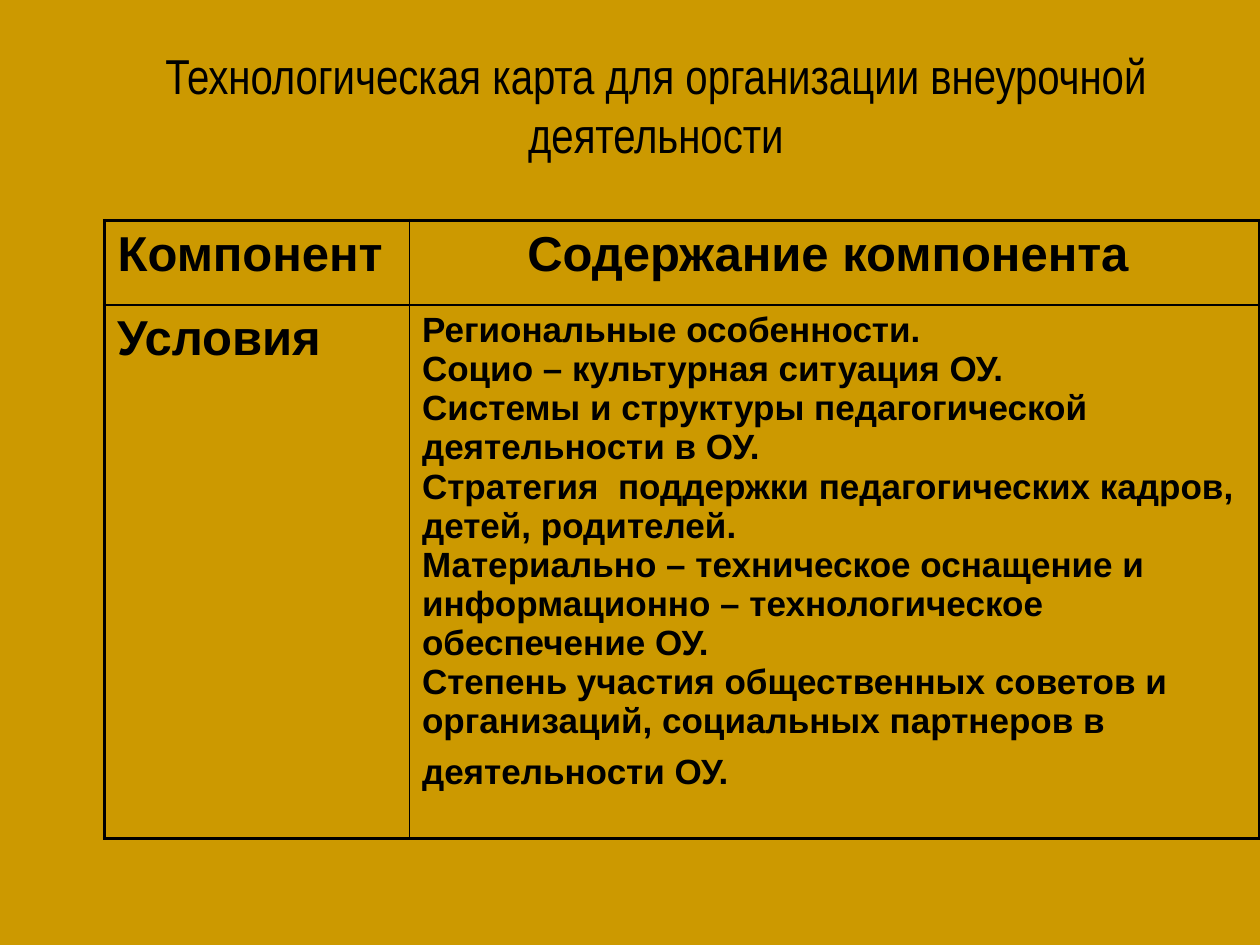
import pptx
import pptx.dml.color
import pptx.enum.text
import pptx.oxml
import pptx.oxml.ns
import pptx.util
from pptx.util import Inches

ALIGN = pptx.enum.text.PP_ALIGN
ANCHOR = pptx.enum.text.MSO_ANCHOR
BLACK = "000000"
GOLD = "CC9900"

TITLE = "Технологическая карта для организации внеурочной деятельности"
HEADERS = ["Компонент ", "Содержание компонента "]
COMPONENT = "Условия"
CONTENT = [
    "Региональные особенности.",
    "Социо – культурная ситуация ОУ.",
    "Системы и структуры педагогической деятельности в ОУ.",
    "Стратегия  поддержки педагогических кадров, детей, родителей.",
    "Материально – техническое оснащение и информационно – технологическое обеспечение ОУ.",
    "Степень участия общественных советов и организаций, социальных партнеров в деятельности ОУ.",
]


def color(hex_string):
    return pptx.dml.color.RGBColor.from_string(hex_string)


def add_text(p, text, size=28, font="Arial", bold=True, align=ALIGN.LEFT):
    """Append text to a paragraph, turning newlines into line breaks."""
    p.alignment = align
    for i, line in enumerate(text.split("\n")):
        if i:
            p.add_line_break()
        r = p.add_run()
        r.text = line
        r.font.size = pptx.util.Pt(size)
        r.font.name = font
        r.font.bold = bold
        r.font.color.rgb = color(BLACK)


def set_borders(cell, widths):
    """Draw cell borders; widths maps L, R, T, B (in that order) to points."""
    tc_pr = cell._tc.get_or_add_tcPr()
    for i, (side, width) in enumerate(widths.items()):
        ln = pptx.oxml.parse_xml(
            f'<a:ln{side} {pptx.oxml.ns.nsdecls("a")} w="{int(pptx.util.Pt(width))}">'
            f'<a:solidFill><a:srgbClr val="{BLACK}"/></a:solidFill></a:ln{side}>'
        )
        tc_pr.insert(i, ln)


def add_title(slide, left, top, width, height):
    tf = slide.shapes.add_textbox(left, top, width, height).text_frame
    tf.word_wrap = True
    tf.vertical_anchor = ANCHOR.MIDDLE
    add_text(tf.paragraphs[0], TITLE, font="Arial Narrow", bold=False, align=ALIGN.CENTER)


def add_component_table(slide, left, top, col_widths, row_heights):
    n_rows, n_cols = len(row_heights), len(col_widths)
    table = slide.shapes.add_table(
        n_rows, n_cols, left, top, sum(col_widths), sum(row_heights)
    ).table
    for col, width in zip(table.columns, col_widths):
        col.width = width
    for row, height in zip(table.rows, row_heights):
        row.height = height

    outer, inner = 2.25, 1
    for i in range(n_rows):
        for j in range(n_cols):
            cell = table.cell(i, j)
            cell.fill.background()
            set_borders(cell, {
                "L": outer if j == 0 else inner,
                "R": outer if j == n_cols - 1 else inner,
                "T": outer if i == 0 else inner,
                "B": outer if i == n_rows - 1 else inner,
            })

    for j, header in enumerate(HEADERS):
        add_text(table.cell(0, j).text_frame.paragraphs[0], header, align=ALIGN.CENTER)
    add_text(table.cell(1, 0).text_frame.paragraphs[0], COMPONENT)
    p = table.cell(1, 1).text_frame.paragraphs[0]
    add_text(p, "\n".join(CONTENT), size=20)
    add_text(p, " ")


def main():
    prs = pptx.Presentation()
    prs.slide_width, prs.slide_height = Inches(10), Inches(7.5)
    slide = prs.slides.add_slide(prs.slide_layouts[6])
    slide.background.fill.solid()
    slide.background.fill.fore_color.rgb = color(GOLD)
    add_title(slide, Inches(0.83), Inches(0.33), Inches(8.75), Inches(1))
    add_component_table(
        slide, Inches(0.83), Inches(1.75),
        [Inches(2.42), Inches(6.75)], [Inches(0.67), Inches(3.66)],
    )
    prs.save("out.pptx")


if __name__ == "__main__":
    main()
